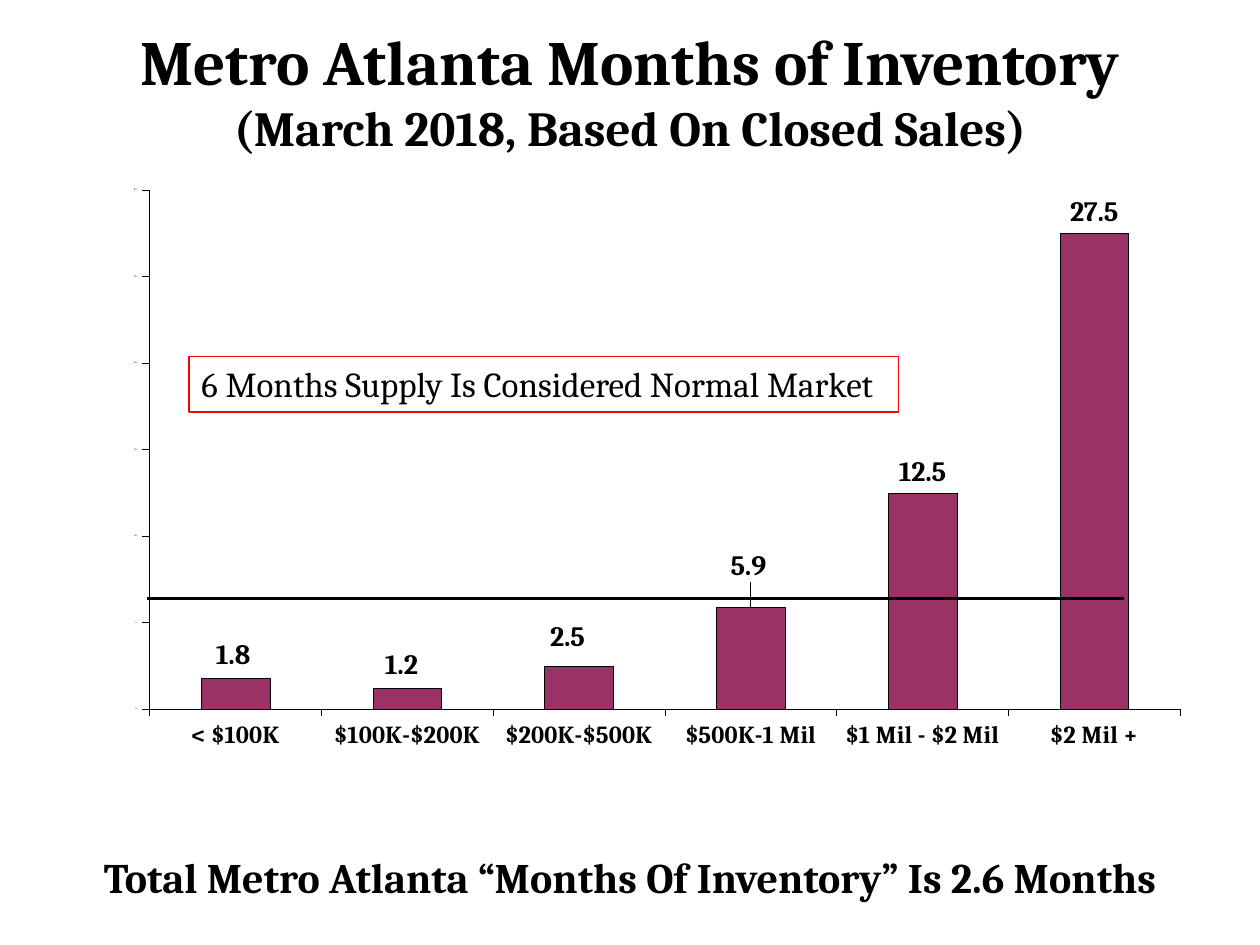
from lxml import etree
from pptx import Presentation
from pptx.chart.data import CategoryChartData
from pptx.dml.color import RGBColor
from pptx.enum.chart import XL_CHART_TYPE, XL_LABEL_POSITION, XL_TICK_LABEL_POSITION, XL_TICK_MARK
from pptx.enum.shapes import MSO_CONNECTOR, MSO_SHAPE
from pptx.enum.text import MSO_ANCHOR, PP_ALIGN
from pptx.oxml import parse_xml
from pptx.oxml.ns import nsdecls, qn
from pptx.util import Inches, Pt

COLUMN = XL_CHART_TYPE.COLUMN_CLUSTERED
ABOVE = XL_LABEL_POSITION.OUTSIDE_END
LOW = XL_TICK_LABEL_POSITION.LOW
OUT, NONE = XL_TICK_MARK.OUTSIDE, XL_TICK_MARK.NONE
LEFT, CENTER = PP_ALIGN.LEFT, PP_ALIGN.CENTER
TOP, MIDDLE = MSO_ANCHOR.TOP, MSO_ANCHOR.MIDDLE

BLACK = RGBColor(0x00, 0x00, 0x00)
PLUM = RGBColor(0x99, 0x33, 0x66)
RED = RGBColor(0xFF, 0x00, 0x00)
FACE = "Cambria"

# Grid of 100 columns by 75 rows
deck = Presentation()
deck.slide_width, deck.slide_height = Inches(10), Inches(7.5)
CELL = deck.slide_width / 100
slide = deck.slides.add_slide(deck.slide_layouts[6])
shapes = slide.shapes


def grid(*cells):
    return [round(n * CELL) for n in cells]


def style(font, size, bold=True):
    font.name, font.size, font.bold = FACE, Pt(size), bold
    font.color.rgb = BLACK


# Column chart
data = CategoryChartData()
data.categories = ["< $100K", "$100K-$200K", "$200K-$500K",
                   "$500K-1 Mil", "$1 Mil - $2 Mil", "$2 Mil +"]
data.add_series("Series 1", [1.8, 1.2, 2.5, 5.9, 12.5, 27.5])
chart = shapes.add_chart(COLUMN, *grid(4.9, 9.7, 90.3, 56.6), data).chart
chart.has_legend = chart.has_title = False
style(chart.font, 1.2)

# Axes
dates, scale = chart.category_axis, chart.value_axis
for axis, size in ((dates, 14), (scale, 1.2)):
    style(axis.tick_labels.font, size)
    axis.major_tick_mark, axis.minor_tick_mark = OUT, NONE
    axis.has_major_gridlines = False
    axis.format.line.color.rgb = BLACK
    axis.format.line.width = Pt(0.02)
dates.tick_label_position = LOW
scale.minimum_scale, scale.maximum_scale, scale.major_unit = 0, 30, 5

# Bars and their labels
plot = chart.plots[0]
plot.gap_width, plot.vary_by_categories = 150, False
bars = plot.series[0]
bars.format.fill.solid()
bars.format.fill.fore_color.rgb = PLUM
bars.format.line.color.rgb = BLACK
bars.format.line.width = Pt(0.06)
labels = bars.data_labels
labels.show_value, labels.position = True, ABOVE
style(labels.font, 16)


def layout(x, y, extra=""):
    return parse_xml(
        f'<c:layout {nsdecls("c")}><c:manualLayout>{extra}'
        f'<c:x val="{x}"/><c:y val="{y}"/></c:manualLayout></c:layout>')


# Labels of the low bars are nudged, in percent of the chart
for i, (dx, dy) in enumerate([(-0.2, -0.3), (-0.5, -0.3), (-1, -1.1), (-0.2, -2.8)]):
    label = bars.points[i].data_label
    style(label.font, 16)
    label.position = ABOVE
    node = labels._element.findall(qn("c:dLbl"))[i]
    node.insert(1, layout(dx / 100, dy / 100))

# Inner plot area
area = chart._chartSpace.chart.plotArea
for old in area.findall(qn("c:layout")):
    area.remove(old)
frame = layout(0.08, 0.09, '<c:layoutTarget val="inner"/>'
               '<c:xMode val="edge"/><c:yMode val="edge"/>')
box = frame[0]
for name, share in (("x", 7.7), ("y", 9.5), ("w", 90.6), ("h", 72.8)):
    tag = qn("c:" + name)
    part = box.find(tag)
    if part is None:
        part = etree.SubElement(box, tag)
    part.set("val", f"{share / 100:.3f}")
area.insert(0, frame)

# Line at six months
line = shapes.add_connector(MSO_CONNECTOR.STRAIGHT, *grid(11.7, 47.5, 89.2, 47.5))
line.line.color.rgb, line.line.width = BLACK, Pt(2.25)
etree.SubElement(line._element.spPr, qn("a:effectLst"))

# Title, closing line and boxed note
title = shapes.add_textbox(*grid(0, 5, 100, 4.2))
total = shapes.add_textbox(*grid(0, 65.8, 100, 5.8))
note = shapes.add_shape(MSO_SHAPE.RECTANGLE, *grid(15, 28.3, 56.3, 4.4))
note.shadow.inherit = False
note.fill.background()
note.line.color.rgb, note.line.width = RED, Pt(0.75)

for shape, text, sizes, bold, align, anchor in (
    (title, "Metro Atlanta Months of Inventory\v(March 2018, Based On Closed Sales)",
     (36, 28), True, CENTER, MIDDLE),
    (total, "Total Metro Atlanta “Months Of Inventory” Is 2.6 Months",
     (24,), True, CENTER, TOP),
    (note, "6 Months Supply Is Considered Normal Market",
     (20,), False, LEFT, TOP),
):
    body = shape.text_frame
    body.word_wrap, body.vertical_anchor = True, anchor
    para = body.paragraphs[0]
    para.text, para.alignment = text, align
    for run, size in zip(para.runs, sizes):
        style(run.font, size, bold)
total.text_frame.margin_top = round(2.2 * CELL)
total.text_frame.paragraphs[0].line_spacing = 0.9

deck.save("out.pptx")
